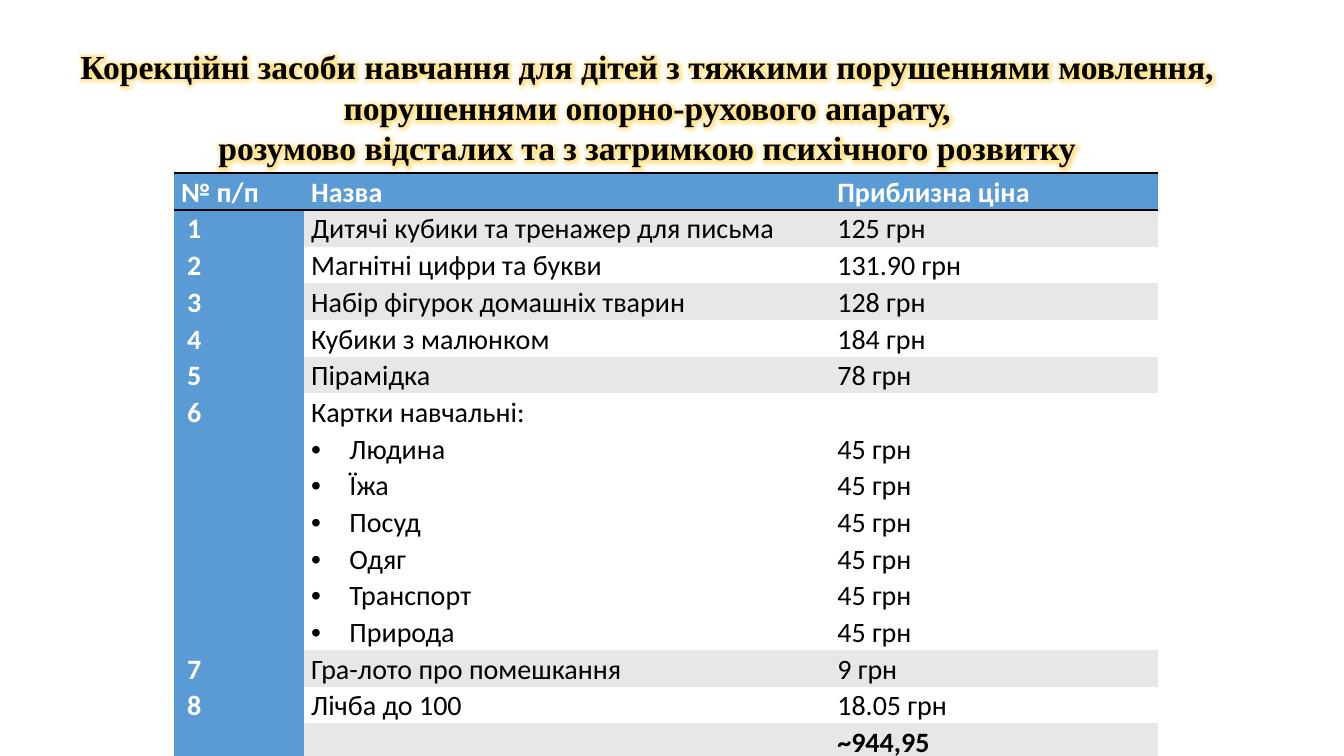
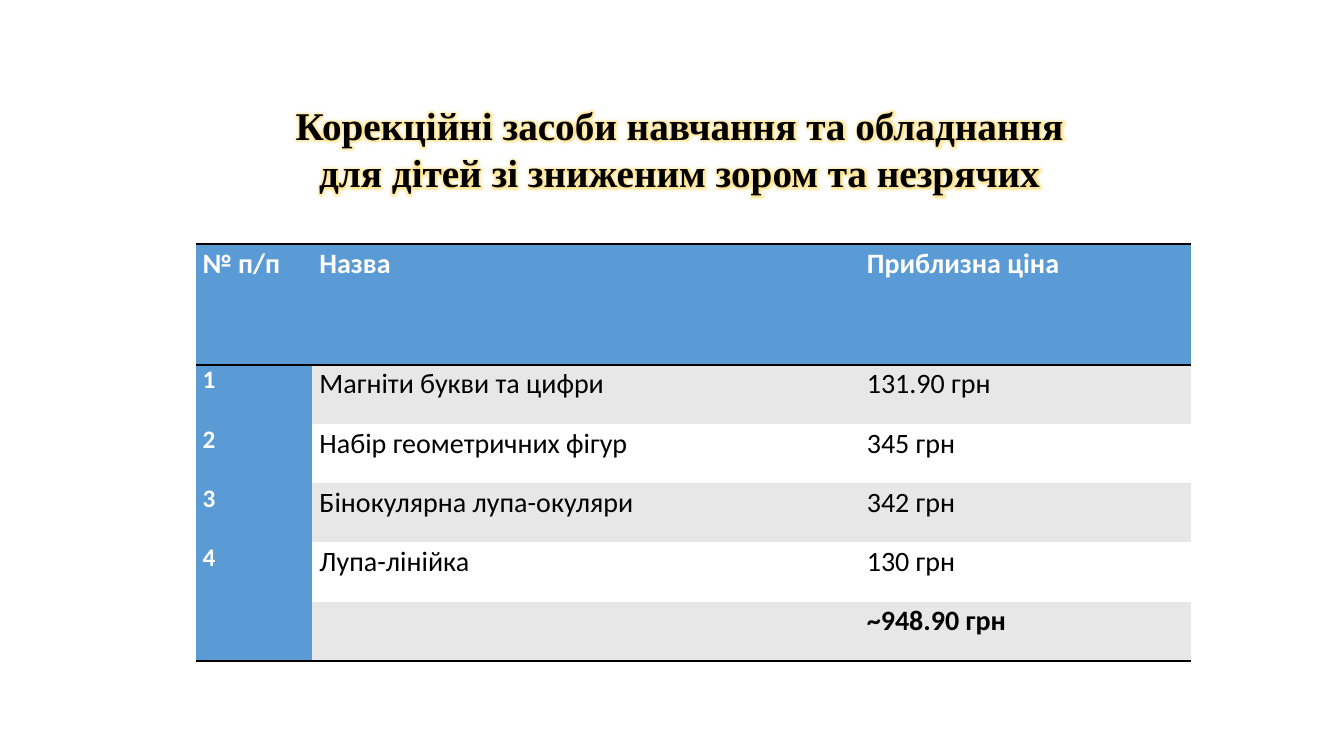
from dataclasses import dataclass

from lxml import etree
from pptx import Presentation
from pptx.dml.color import RGBColor
from pptx.enum.text import MSO_ANCHOR, MSO_AUTO_SIZE, PP_ALIGN
from pptx.oxml.ns import qn
from pptx.util import Inches, Pt

CENTER = PP_ALIGN.CENTER
TOP, MIDDLE, BOTTOM = MSO_ANCHOR.TOP, MSO_ANCHOR.MIDDLE, MSO_ANCHOR.BOTTOM
GROW = MSO_AUTO_SIZE.SHAPE_TO_FIT_TEXT
NO_GRID_STYLE = "{2D5ABB26-0587-4C30-8999-92F81FD0307C}"
BLANK_LAYOUT = 6
GRID = 100  # columns and rows on each slide


@dataclass(frozen=True)
class Theme:
    blue: str = "5B9BD5"
    band: str = "E7E7E7"
    white: str = "FFFFFF"
    black: str = "000000"
    glow: str = "FFC000"
    title_font: str = "Times New Roman"
    body_font: str = "Calibri"
    body_size: int = 20
    body_spacing: float = 1.07
    rule_width: int = 2
    glow_radius: int = 8
    glow_opacity: int = 45
    cell_margin: float = 0.07
    bullet_indent: float = 0.38


def add_element(parent, tag, **attributes):
    values = {name: str(value) for name, value in attributes.items()}
    return etree.SubElement(parent, qn(tag), values)


class SlideBuilder:
    def __init__(self, deck, theme):
        self.deck, self.theme, self.page = deck, theme, None

    def new_page(self):
        self.page = self.deck.slides.add_slide(self.deck.slide_layouts[BLANK_LAYOUT])

    def across(self, columns):
        return round(self.deck.slide_width * columns / GRID)

    def down(self, rows):
        return round(self.deck.slide_height * rows / GRID)

    def style(self, para, font, size, color, bold):
        para.font.name, para.font.size, para.font.bold = font, Pt(size), bold
        para.font.color.rgb = RGBColor.from_string(color)

    # Glowing centred heading
    def title(self, lines, size, left, top, width, height):
        box = self.page.shapes.add_textbox(
            self.across(left), self.down(top), self.across(width), self.down(height))
        frame = box.text_frame
        frame.word_wrap, frame.auto_size = False, GROW
        frame.vertical_anchor = MIDDLE
        frame.text = "\n".join(lines)
        for para in frame.paragraphs:
            para.alignment = CENTER
            self.style(para, self.theme.title_font, size, self.theme.black, True)
            for span in para.runs:
                self.glow(span)

    def glow(self, span):
        effects = add_element(span._r.get_or_add_rPr(), "a:effectLst")
        glow = add_element(effects, "a:glow", rad=Pt(self.theme.glow_radius))
        color = add_element(glow, "a:srgbClr", val=self.theme.glow)
        add_element(color, "a:alpha", val=self.theme.glow_opacity * 1000)

    # Price list: blue header and first column, banded rows, total at the end
    def price_table(self, rows, left, top, widths, heights,
                    number_size, number_spacing, number_margin):
        theme = self.theme
        graphic = self.page.shapes.add_table(
            len(rows), len(widths), self.across(left), self.down(top),
            self.across(sum(widths)), self.down(sum(heights)))
        table = graphic.table
        table.horz_banding = False
        next(graphic.element.iter(qn("a:tableStyleId"))).text = NO_GRID_STYLE
        for column, width in zip(table.columns, widths):
            column.width = self.across(width)
        last = len(rows) - 1
        for r, (row, height) in enumerate(zip(rows, heights)):
            table.rows[r].height = self.down(height)
            for c, content in enumerate(row):
                cell = table.cell(r, c)
                heading, numbered = r == 0 or c == 0, r > 0 and c == 0
                if r == 0:
                    self.rule(cell, "a:lnT")
                if r in (0, last):
                    self.rule(cell, "a:lnB")
                fill = theme.blue if heading else theme.band if r % 2 else theme.white
                cell.fill.solid()
                cell.fill.fore_color.rgb = RGBColor.from_string(fill)
                cell.margin_top = cell.margin_bottom = 0
                cell.margin_left = Inches(number_margin if numbered else theme.cell_margin)
                cell.margin_right = Inches(theme.cell_margin)
                self.cell_text(
                    cell, content,
                    number_size if numbered else theme.body_size,
                    number_spacing if numbered else theme.body_spacing,
                    theme.white if heading else theme.black,
                    heading or r == last, bulleted=c == 1)

    def cell_text(self, cell, content, size, spacing, color, bold, bulleted):
        lines = [content] if isinstance(content, str) else content
        # A list of prices lines up with the items below their heading
        cell.vertical_anchor = BOTTOM if len(lines) > 1 and not bulleted else TOP
        cell.text_frame.text = "\n".join(lines)
        for i, para in enumerate(cell.text_frame.paragraphs):
            if bulleted and i:
                self.bullet(para)
            para.line_spacing = spacing
            self.style(para, self.theme.body_font, size, color, bold)

    def bullet(self, para):
        indent = Inches(self.theme.bullet_indent)
        properties = para._p.get_or_add_pPr()
        properties.set("marL", str(indent))
        properties.set("indent", str(-indent))
        add_element(properties, "a:buFont", typeface="Arial")
        add_element(properties, "a:buChar", char="•")

    def rule(self, cell, side):
        line = add_element(cell._tc.get_or_add_tcPr(), side, w=Pt(self.theme.rule_width))
        fill = add_element(line, "a:solidFill")
        add_element(fill, "a:srgbClr", val=self.theme.black)


HEADER = ("№ п/п", "Назва", "Приблизна ціна")
CARDS = ["Людина", "Їжа", "Посуд", "Одяг", "Транспорт", "Природа"]
SPEECH_AIDS = [
    ("Дитячі кубики та тренажер для письма", "125 грн"),
    ("Магнітні цифри та букви", "131.90 грн"),
    ("Набір фігурок домашніх тварин", "128 грн"),
    ("Кубики з малюнком", "184 грн"),
    ("Пірамідка", "78 грн"),
    (["Картки навчальні:"] + CARDS, ["45 грн"] * len(CARDS)),
    ("Гра-лото про помешкання", "9 грн"),
    ("Лічба до 100", "18.05 грн"),
]
VISION_AIDS = [
    ("Магніти букви та цифри", "131.90 грн"),
    ("Набір геометричних фігур", "345 грн"),
    ("Бінокулярна лупа-окуляри", "342 грн"),
    ("Лупа-лінійка", "130 грн"),
]


def price_rows(items, total):
    numbered = [(str(n), name, price) for n, (name, price) in enumerate(items, 1)]
    return [HEADER, *numbered, ("", "", total)]


def main():
    deck = Presentation()
    deck.slide_width, deck.slide_height = Inches(13.33), Inches(7.5)
    builder = SlideBuilder(deck, Theme())

    # Speech, movement and learning aids
    builder.new_page()
    builder.price_table(
        price_rows(SPEECH_AIDS, "~944,95"), left=12.95, top=22.9,
        widths=[9.68, 39.15, 24.38], heights=[3.73] * 6 + [27.6] + [3.73] * 3,
        number_size=20, number_spacing=1.07, number_margin=0.13)
    builder.title(
        ["Корекційні засоби навчання для дітей з тяжкими порушеннями мовлення,",
         "порушеннями опорно-рухового апарату,",
         "розумово відсталих та з затримкою психічного розвитку"],
        size=24, left=4.8, top=5.4, width=86.7, height=17.47)

    # Vision aids
    builder.new_page()
    builder.price_table(
        price_rows(VISION_AIDS, "~948.90 грн"), left=14.55, top=32.27,
        widths=[8.7, 40.73, 24.65], heights=[16] + [7.83] * 5,
        number_size=18, number_spacing=1.0, number_margin=0.07)
    builder.title(
        ["Корекційні засоби навчання та обладнання",
         "для дітей зі зниженим зором та незрячих"],
        size=28, left=20.93, top=12.67, width=59.25, height=13.87)

    deck.save("out.pptx")


if __name__ == "__main__":
    main()
